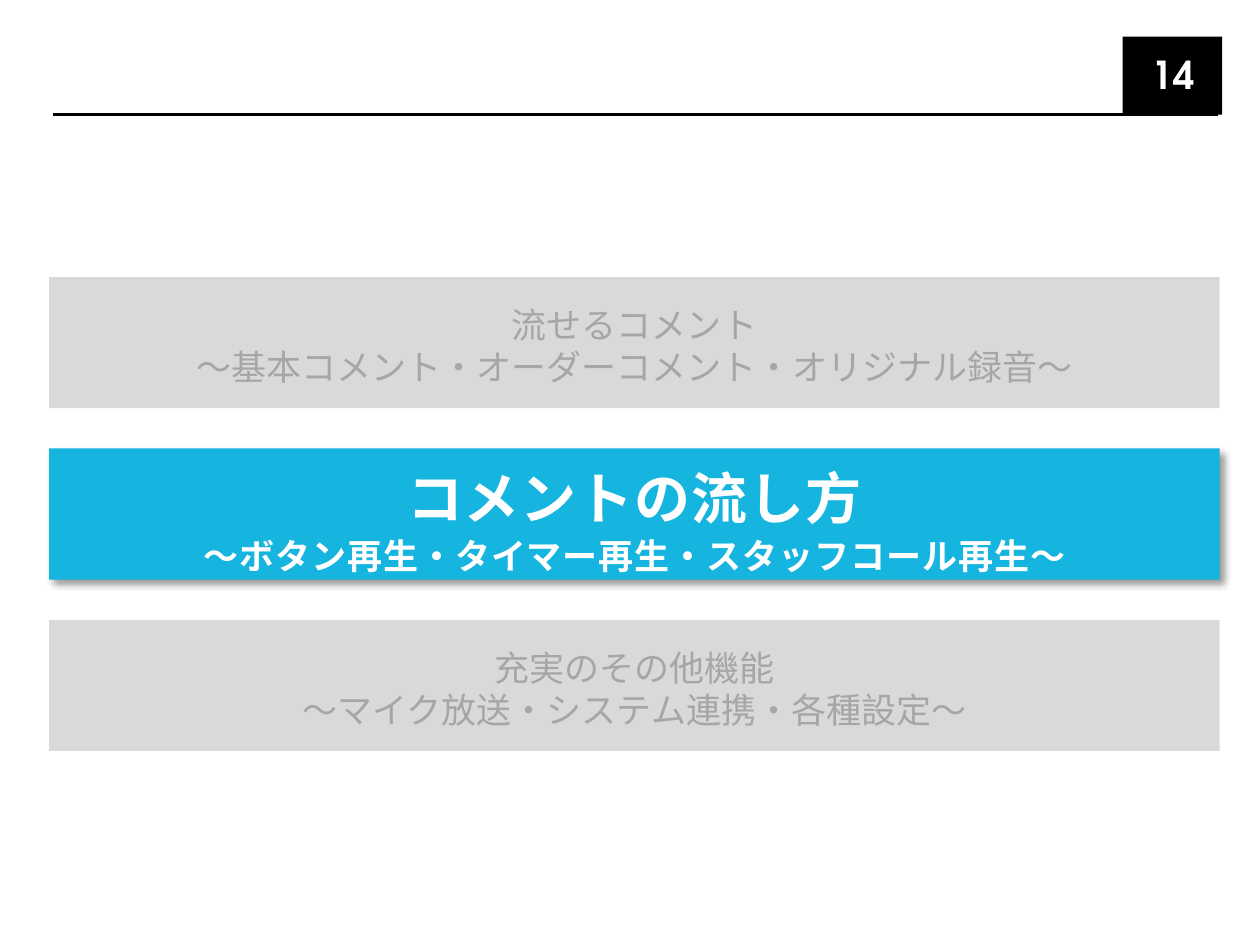
from lxml.etree import SubElement
from pptx import Presentation
from pptx.dml.color import RGBColor
from pptx.enum.shapes import MSO_CONNECTOR, MSO_SHAPE
from pptx.enum.text import MSO_ANCHOR, PP_ALIGN
from pptx.oxml.ns import qn
from pptx.util import Inches, Pt

BLACK = RGBColor(0x00, 0x00, 0x00)
WHITE = RGBColor(0xFF, 0xFF, 0xFF)
PALE_GREY = RGBColor(0xD9, 0xD9, 0xD9)
MID_GREY = RGBColor(0xA6, 0xA6, 0xA6)
BLUE = RGBColor(0x16, 0xB5, 0xE0)

JAPANESE_FONT = "Noto Sans CJK JP"
NUMBER_FONT = "TeX Gyre Adventor"

BAND_LEFT, BAND_TOP = 0.39, 2.2
BAND_WIDTH, BAND_HEIGHT = 9.29, 1.04
BAND_PITCH = 1.36

CHAPTERS = [
    ("流せるコメント", "～基本コメント・オーダーコメント・オリジナル録音～"),
    ("コメントの流し方", "～ボタン再生・タイマー再生・スタッフコール再生～"),
    ("充実のその他機能", "～マイク放送・システム連携・各種設定～"),
]
CURRENT_CHAPTER = 1


def write_text(paragraph, text, *, size, color, font, bold=False,
               align=PP_ALIGN.CENTER, line_height=None, tracking=0):
    paragraph.alignment = align
    if line_height:
        paragraph.line_spacing = Pt(line_height)
    run = paragraph.add_run()
    run.text = text
    run.font.size = Pt(size)
    run.font.bold = bold
    run.font.color.rgb = color
    run.font.name = font
    properties = run.font._element
    SubElement(properties, qn("a:ea"), typeface=font)
    if tracking:
        properties.set("spc", str(int(tracking * 100)))


def prepare_frame(shape, top_inset=0.0):
    frame = shape.text_frame
    frame.word_wrap = True
    frame.vertical_anchor = MSO_ANCHOR.MIDDLE
    frame.margin_left = frame.margin_right = frame.margin_bottom = 0
    frame.margin_top = Inches(top_inset)
    return frame


def add_box(slide, left, top, width, height, fill):
    shape = slide.shapes.add_shape(
        MSO_SHAPE.RECTANGLE, Inches(left), Inches(top), Inches(width), Inches(height))
    shape.shadow.inherit = False
    shape.fill.solid()
    shape.fill.fore_color.rgb = fill
    shape.line.fill.background()
    return shape


def add_drop_shadow(shape):
    effects = shape._element.spPr.find(qn("a:effectLst"))
    shadow = SubElement(effects, qn("a:outerShdw"), blurRad=str(Pt(4)), dist=str(Pt(3)),
                        dir=str(45 * 60000), algn="tl", rotWithShape="0")
    color = SubElement(shadow, qn("a:srgbClr"), val=str(BLACK))
    SubElement(color, qn("a:alpha"), val="40000")


def add_rule(slide, left, right, top):
    line = slide.shapes.add_connector(
        MSO_CONNECTOR.STRAIGHT, Inches(left), Inches(top), Inches(right), Inches(top))
    line.line.color.rgb = BLACK
    line.line.width = Pt(1.5)
    SubElement(line._element.spPr, qn("a:effectLst"))


def add_page_number(slide, number):
    box = slide.shapes.add_textbox(Inches(9.03), Inches(0.39), Inches(0.55), Inches(0.4))
    frame = prepare_frame(box)
    frame.margin_right = Inches(0.1)
    write_text(frame.paragraphs[0], number, size=22, color=WHITE, font=NUMBER_FONT,
               bold=True, align=PP_ALIGN.RIGHT)


def add_chapter(slide, row, title, subtitle, current):
    band = add_box(slide, BAND_LEFT, BAND_TOP + row * BAND_PITCH, BAND_WIDTH, BAND_HEIGHT,
                   BLUE if current else PALE_GREY)
    if current:
        add_drop_shadow(band)
    frame = prepare_frame(band, top_inset=0.11 if current else 0.05)
    style = dict(color=WHITE if current else MID_GREY, font=JAPANESE_FONT,
                 bold=current, tracking=0.5 if current else 0)
    write_text(frame.paragraphs[0], title, size=32 if current else 20,
               line_height=37 if current else 24, **style)
    write_text(frame.add_paragraph(), subtitle, size=20,
               line_height=26 if current else 24, **style)


def main():
    presentation = Presentation()
    presentation.slide_width = Inches(10)
    presentation.slide_height = Inches(7.5)
    slide = presentation.slides.add_slide(presentation.slide_layouts[6])
    add_box(slide, 8.91, 0.29, 0.79, 0.62, BLACK)
    add_rule(slide, 0.42, 9.67, 0.91)
    add_page_number(slide, "14")
    for row, (title, subtitle) in enumerate(CHAPTERS):
        add_chapter(slide, row, title, subtitle, row == CURRENT_CHAPTER)
    presentation.save("out.pptx")


if __name__ == "__main__":
    main()
